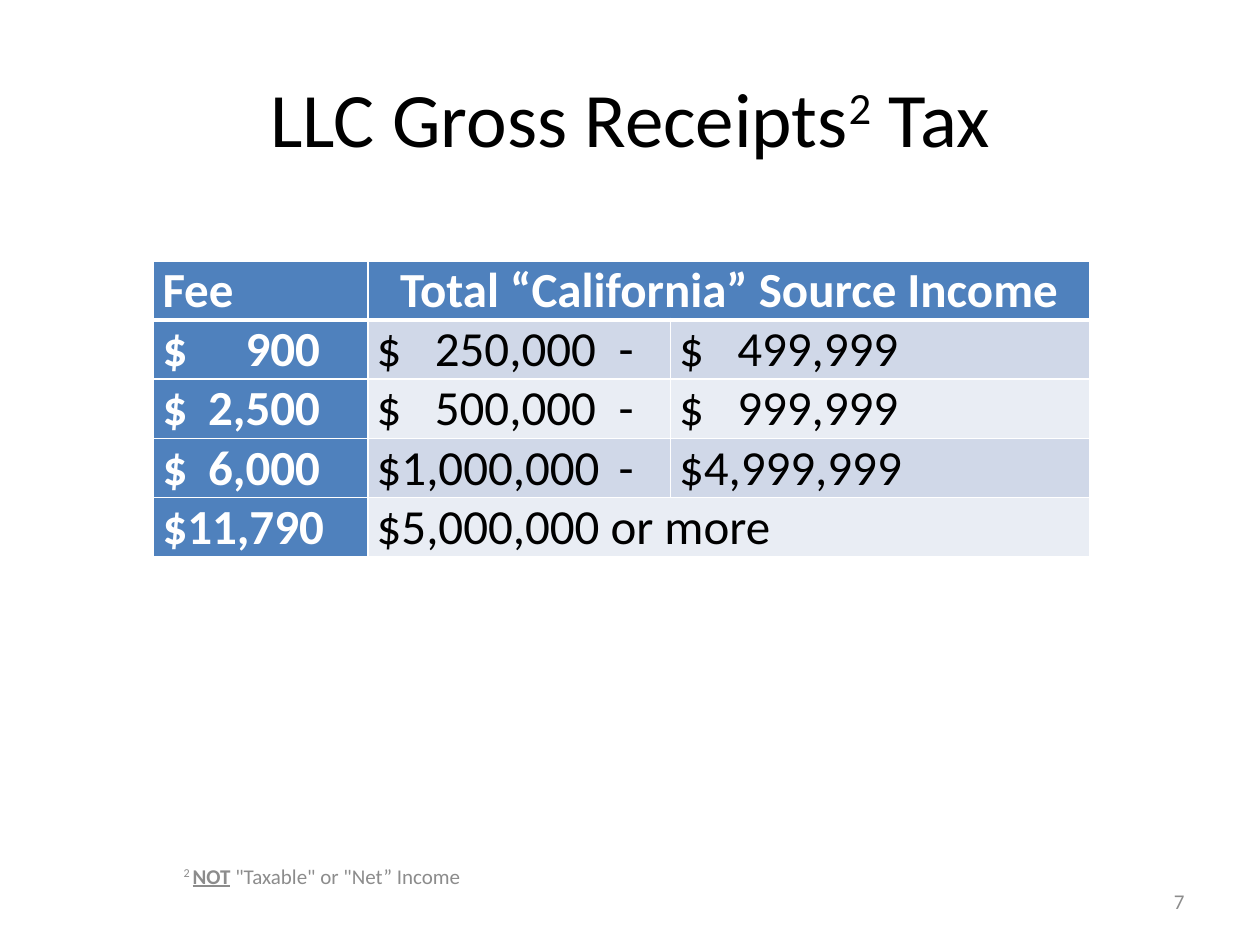
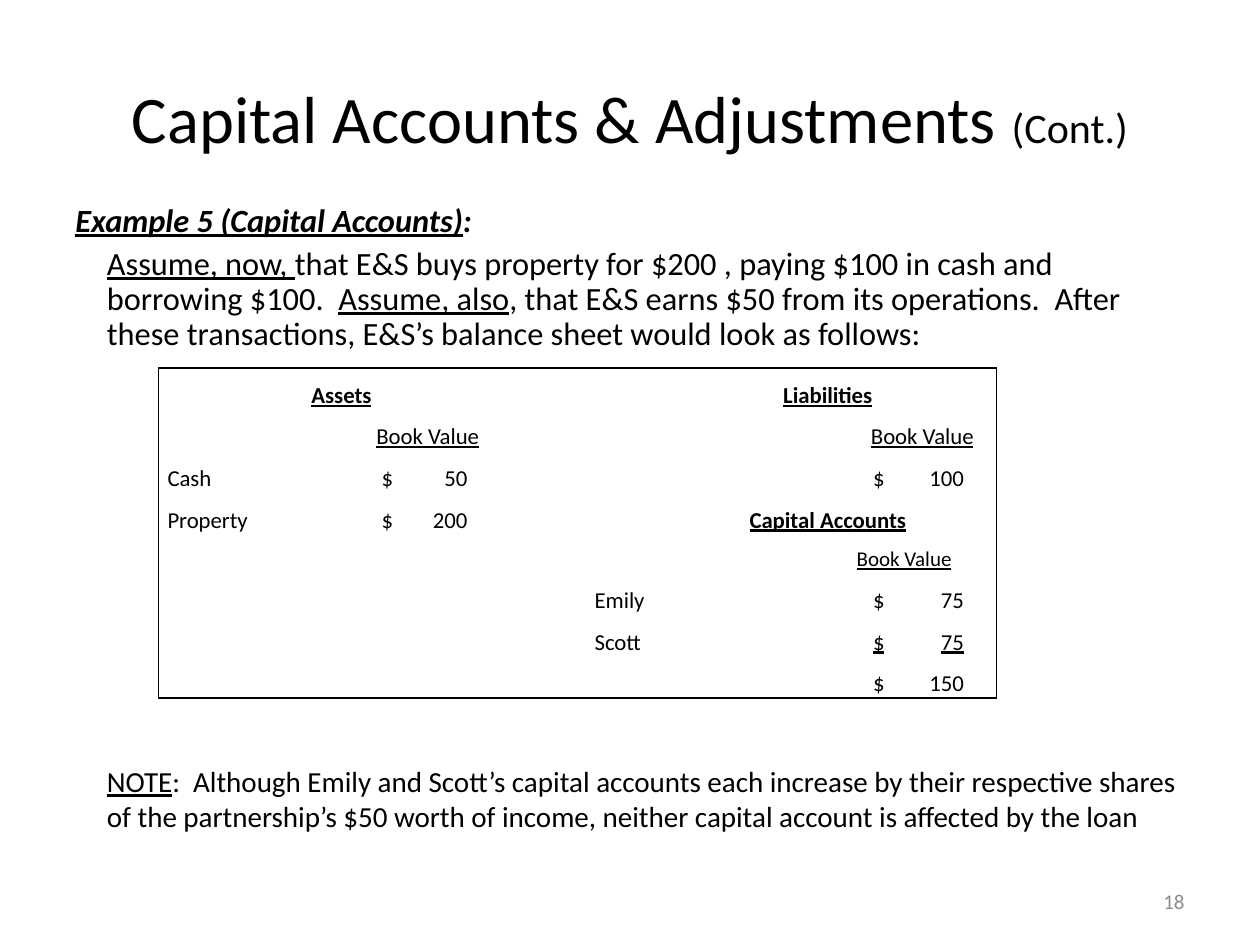
from dataclasses import dataclass

from lxml.etree import SubElement
from pptx import Presentation
from pptx.dml.color import RGBColor
from pptx.enum.text import MSO_ANCHOR, PP_ALIGN
from pptx.oxml.ns import qn
from pptx.util import Inches, Pt


@dataclass(frozen=True)
class Theme:
    font: str = "Calibri"
    black: str = "000000"
    white: str = "FFFFFF"
    gray: str = "8C8C8C"
    blue: str = "4F81BD"
    band_dark: str = "D0D8E8"
    band_light: str = "E9EDF4"
    title: float = 44
    long_title: float = 38
    title_suffix: float = 24
    fee: float = 28
    body: float = 18.5
    note: float = 16.6
    sheet: float = 13
    sheet_small: float = 12
    footer: float = 12


theme = Theme()
LEFT, CENTER, RIGHT = PP_ALIGN.LEFT, PP_ALIGN.CENTER, PP_ALIGN.RIGHT
TOP, MIDDLE = MSO_ANCHOR.TOP, MSO_ANCHOR.MIDDLE


def write(paragraph, spans, size, color, align=LEFT, tabs=()):
    """Spans are (text, style, optional size); style letters: b, i, u, ^ (superscript)."""
    paragraph.alignment = align
    if tabs:
        tab_list = SubElement(paragraph._p.get_or_add_pPr(), qn("a:tabLst"))
        for position, kind in tabs:
            SubElement(tab_list, qn("a:tab"), pos=str(Inches(position)), algn=kind)
    for text, style, *own_size in spans:
        span = paragraph.add_run()
        span.text = text
        font = span.font
        font.name = theme.font
        font.size = Pt(own_size[0] if own_size else size)
        font.color.rgb = RGBColor.from_string(color)
        font.bold, font.italic, font.underline = (mark in style for mark in "biu")
        if "^" in style:
            span._r.get_or_add_rPr().set("baseline", "30000")


def paint_cell(cell, fill, edges, edge_color):
    """Set margins, edges as {side: points} and fill."""
    cell.margin_left = cell.margin_right = Inches(0.07)
    cell.margin_top = cell.margin_bottom = 0
    properties = cell._tc.get_or_add_tcPr()
    for side in "LRTB":
        if side in edges:
            line = SubElement(properties, qn(f"a:ln{side}"), w=str(Pt(edges[side])))
            solid = SubElement(line, qn("a:solidFill"))
            SubElement(solid, qn("a:srgbClr"), val=edge_color)
        else:
            line = SubElement(properties, qn(f"a:ln{side}"), w="0")
            SubElement(line, qn("a:noFill"))
    cell.fill.solid()
    cell.fill.fore_color.rgb = RGBColor.from_string(fill)


deck = Presentation()
deck.slide_width, deck.slide_height = Inches(10), Inches(7.5)
blank = deck.slide_layouts[6]
fee_page = deck.slides.add_slide(blank)
capital_page = deck.slides.add_slide(blank)

# Titles and page numbers
title_area = (0.5, 0.3, 9, 1.25)
number_area = (7.17, 6.95, 2.33, 0.4)
boxes = [
    (fee_page, title_area, MIDDLE, CENTER, theme.title, theme.black,
     [("LLC Gross Receipts", ""), ("2", "^"), (" Tax", "")]),
    (fee_page, number_area, MIDDLE, RIGHT, theme.footer, theme.gray, [("7", "")]),
    (capital_page, title_area, MIDDLE, CENTER, theme.long_title, theme.black,
     [("Capital Accounts & Adjustments ", ""), ("(Cont.)", "", theme.title_suffix)]),
    (capital_page, number_area, MIDDLE, RIGHT, theme.footer, theme.gray, [("18", "")]),
    # Footnote
    (fee_page, (1.36, 6.75, 5.11, 0.4), MIDDLE, LEFT, theme.footer, theme.gray,
     [("2 ", "^"), ("NOT", "bu"), (' "Taxable" or "Net” Income', "")]),
    # Example heading, text and closing note
    (capital_page, (0.5, 1.57, 9, 0.4), TOP, LEFT, theme.body, theme.black,
     [("Example 5 (Capital Accounts)", "biu"), (":", "bi")]),
    (capital_page, (0.75, 1.91, 8.75, 0.95), TOP, LEFT, theme.body, theme.black,
     [("Assume, now, ", "u"),
      ("that E&S buys property for $200 , paying $100 in cash and borrowing $100.  ", ""),
      ("Assume, also", "u"),
      (", that E&S earns $50 from its operations.  After these transactions, "
       "E&S’s balance sheet would look as follows:", "")]),
    (capital_page, (0.75, 6.01, 8.75, 0.7), TOP, LEFT, theme.note, theme.black,
     [("NOTE", "u"),
      (":  Although Emily and Scott’s capital accounts each increase by their "
       "respective shares of the partnership’s $50 worth of income, neither capital "
       "account is affected by the loan", "")]),
]
for page, area, anchor, align, size, color, spans in boxes:
    box = page.shapes.add_textbox(*map(Inches, area))
    frame = box.text_frame
    frame.word_wrap = True
    frame.vertical_anchor = anchor
    paragraph = frame.paragraphs[0]
    write(paragraph, spans, size, color, align)
    if anchor == TOP:
        paragraph.line_spacing = Pt(20) if size == theme.body else 1.0

# Fee table
fee_rows = [
    ("Fee", "Total “California” Source Income", "", ""),
    ("$\t900", "$\t250,000\t-", "", "$\t499,999"),
    ("$\t2,500", "$\t500,000\t-", "", "$\t999,999"),
    ("$\t6,000", "$1,000,000\t-", "", "$4,999,999"),
    ("$11,790", "$5,000,000 or more", "", ""),
]
fee_tabs = [
    [(1.25, "r")],
    [(1.74, "r"), (1.92, "l")],
    [],
    [(1.74, "r")],
]
fee_widths = [1.7, 2.22, 0.18, 3.33]
fee_table = fee_page.shapes.add_table(
    5, 4, Inches(1.22), Inches(2.07), Inches(7.43), Inches(2.35)).table
for column, width in zip(fee_table.columns, fee_widths):
    column.width = Inches(width)
for row in (0, 4):
    fee_table.cell(row, 1).merge(fee_table.cell(row, 3))
for row, texts in enumerate(fee_rows):
    fee_table.rows[row].height = Inches(0.47)
    for column, text in enumerate(texts):
        cell = fee_table.cell(row, column)
        heading = row == 0 or column == 0
        band = theme.band_dark if row % 2 else theme.band_light
        edges = {"L": 1, "R": 1, "T": 3 if row == 1 else 1, "B": 1 if row else 3}
        # The range start and the narrow gap beside it read as one cell
        if 0 < row < 4 and column in (1, 2):
            del edges["R" if column == 1 else "L"]
        paint_cell(cell, theme.blue if heading else band, edges, theme.white)
        if text:
            tabs = fee_tabs[column]
            # An amount without a leading tab uses only the tab before the dash
            if text.startswith("$1,000,000"):
                tabs = tabs[1:]
            write(cell.text_frame.paragraphs[0], [(text, "b" if heading else "")],
                  theme.fee, theme.white if heading else theme.black,
                  CENTER if (row, column) == (0, 1) else LEFT, tabs)

# Balance sheet: (row, column): (text, style)
sheet_cells = {
    (0, 0): ("Assets", "bu"),
    (0, 3): ("Liabilities", "bu"),
    (1, 1): ("Book Value", "u"),
    (1, 4): ("Book Value", "u"),
    (2, 0): ("Cash", ""),
    (2, 1): ("$\t50", ""),
    (2, 4): ("$\t100", ""),
    (3, 0): ("Property", ""),
    (3, 1): ("$\t200", ""),
    (3, 3): ("Capital Accounts", "bu"),
    (4, 4): ("Book Value", "u", theme.sheet_small),
    (5, 2): ("Emily", ""),
    (5, 4): ("$\t75", ""),
    (6, 2): ("Scott", ""),
    (6, 4): ("$\t75", "u"),
    (7, 4): ("$\t150", ""),
}
sheet_widths = [1.37, 1.53, 1.07, 1.5, 1.18]
amount_margins = {1: 0.4, 4: 0.2}
amount_tabs = {1: [(0.68, "r")], 4: [(0.72, "r")]}
sheet = capital_page.shapes.add_table(
    8, 5, Inches(1.26), Inches(2.92), Inches(6.65), Inches(2.62)).table
for column, width in zip(sheet.columns, sheet_widths):
    column.width = Inches(width)
for row, column in ((0, 0), (0, 3), (3, 3)):
    sheet.cell(row, column).merge(sheet.cell(row, column + 1))
for row in range(8):
    sheet.rows[row].height = Inches(0.31 if row == 4 else 0.33)
    for column in range(5):
        cell = sheet.cell(row, column)
        last_column = column + (cell.span_width if cell.is_merge_origin else 1) == 5
        outline = {"L": column == 0, "R": last_column, "T": row == 0, "B": row == 7}
        paint_cell(cell, theme.white,
                   {side: 1 for side, outer in outline.items() if outer}, theme.black)
        if (row, column) not in sheet_cells:
            continue
        span = sheet_cells[row, column]
        amount = span[0].startswith("$")
        if amount:
            cell.margin_left = Inches(amount_margins[column])
        elif column == 2:
            cell.margin_left = Inches(0.56)
        paragraph = cell.text_frame.paragraphs[0]
        paragraph.line_spacing = 1.5
        centered = "u" in span[1] and not amount and row != 4
        write(paragraph, [span], theme.sheet, theme.black,
              CENTER if centered else LEFT, amount_tabs[column] if amount else ())

deck.save("out.pptx")
